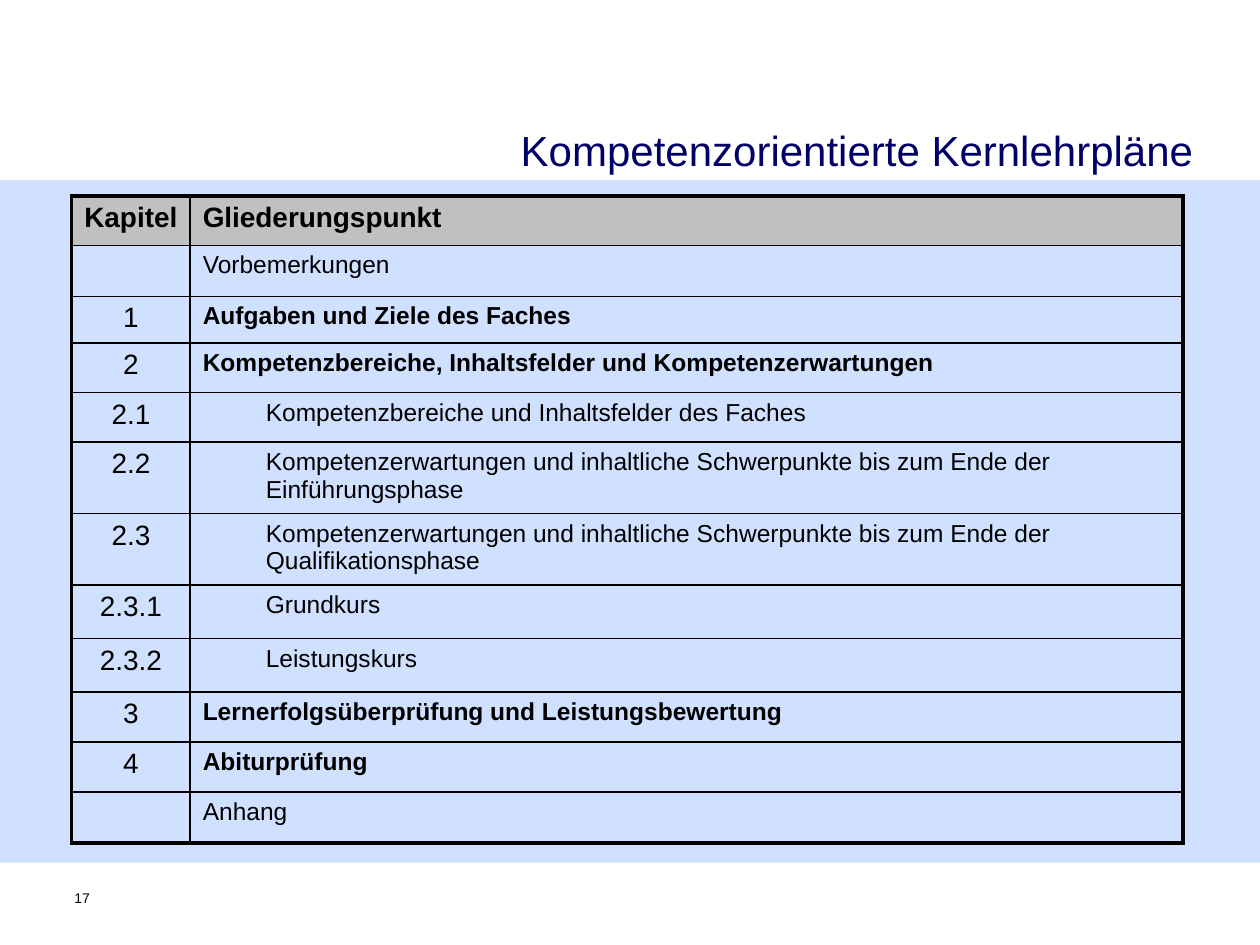
"""Builds the slide on the chapter structure of competence-oriented curricula."""
from lxml import etree
from pptx import Presentation
from pptx import util as u
from pptx.dml import color
from pptx.enum import shapes, text
from pptx.oxml import ns

COLORS = {"text": "000000", "title": "000066", "band": "6699FF", "header": "C0C0C0"}

CHAPTERS = [
    ("Kapitel", "Gliederungspunkt", "header", 28.2),
    ("", "Vorbemerkungen", "plain", 28.2),
    ("1", "Aufgaben und Ziele des Faches", "main", 26.6),
    ("2", "Kompetenzbereiche, Inhaltsfelder und Kompetenzerwartungen", "main", 28.4),
    ("2.1", "Kompetenzbereiche und Inhaltsfelder des Faches", "sub", 28.4),
    ("2.2", "Kompetenzerwartungen und inhaltliche Schwerpunkte bis zum Ende der "
            "Einführungsphase", "sub", 40.8),
    ("2.3", "Kompetenzerwartungen und inhaltliche Schwerpunkte bis zum Ende der "
            "Qualifikationsphase", "sub", 40.8),
    ("2.3.1", "Grundkurs", "sub", 30.6),
    ("2.3.2", "Leistungskurs", "sub", 30.6),
    ("3", "Lernerfolgsüberprüfung und Leistungsbewertung", "main", 28.5),
    ("4", "Abiturprüfung", "main", 28.5),
    ("", "Anhang", "plain", 28.2),
]


def write(frame, content, size=14, bold=False, fill="text", align="LEFT", indent=0):
    """Write one formatted paragraph into a text frame."""
    paragraph = frame.paragraphs[0]
    paragraph.alignment = getattr(text.PP_ALIGN, align)
    if indent:
        paragraph.level = 1
        properties = paragraph._p.get_or_add_pPr()
        properties.set("marL", str(u.Pt(indent)))
        properties.set("indent", "0")
    run = paragraph.add_run()
    run.text = content
    run.font.name = "Arial"
    run.font.size = u.Pt(size)
    run.font.bold = bold
    run.font.color.rgb = color.RGBColor.from_string(COLORS[fill])


class SlideBuilder:
    """Holds the colours and the current slide."""

    def __init__(self, presentation, colors):
        """Add a title-only slide."""
        self.colors = colors
        self.slide = presentation.slides.add_slide(presentation.slide_layouts[5])

    def paint(self, fill, name):
        """Apply a solid colour to a fill."""
        fill.solid()
        fill.fore_color.rgb = color.RGBColor.from_string(self.colors[name])

    def band(self, left, top, width, height, opacity):
        """Add a translucent background band."""
        shape = self.slide.shapes.add_shape(
            shapes.MSO_SHAPE.RECTANGLE, *map(u.Pt, (left, top, width, height)))
        shape.shadow.inherit = False
        self.paint(shape.fill, "band")
        shape.line.fill.background()
        rgb = shape._element.spPr.find(".//" + ns.qn("a:srgbClr"))
        etree.SubElement(rgb, ns.qn("a:alpha"), val=str(opacity * 1000))

    def title(self, content, left, top, width, height):
        """Place and fill the title placeholder."""
        shape = self.slide.shapes.title
        shape.left, shape.top, shape.width, shape.height = map(
            u.Pt, (left, top, width, height))
        shape.text_frame.vertical_anchor = text.MSO_ANCHOR.MIDDLE
        write(shape.text_frame, content, size=24, fill="title", align="RIGHT")

    def label(self, content, left, top, width, height):
        """Add a small text box without insets."""
        shape = self.slide.shapes.add_textbox(*map(u.Pt, (left, top, width, height)))
        frame = shape.text_frame
        frame.word_wrap = True
        frame.margin_left = frame.margin_right = frame.margin_top = frame.margin_bottom = 0
        write(frame, content, size=8)

    def borders(self, cell, outer):
        """Draw the cell borders, thicker on the outer sides."""
        properties = cell._tc.get_or_add_tcPr()
        for position, side in enumerate("LRTB"):
            width = 2.25 if side in outer else 1
            line = etree.Element(ns.qn(f"a:ln{side}"), w=str(u.Pt(width)))
            fill = etree.SubElement(line, ns.qn("a:solidFill"))
            etree.SubElement(fill, ns.qn("a:srgbClr"), val=self.colors["text"])
            properties.insert(position, line)

    def table(self, chapters, left, top, widths):
        """Add the table of chapters."""
        heights = [chapter[3] for chapter in chapters]
        table = self.slide.shapes.add_table(
            len(chapters), len(widths),
            *map(u.Pt, (left, top, sum(widths), sum(heights)))).table
        table.first_row = table.horz_banding = False
        for column, width in zip(table.columns, widths):
            column.width = u.Pt(width)
        last = len(chapters) - 1
        for index, (number, topic, kind, height) in enumerate(chapters):
            table.rows[index].height = u.Pt(height)
            header = kind == "header"
            vertical = {0: "T", last: "B"}.get(index, "")
            for position, content in enumerate((number, topic)):
                cell = table.cell(index, position)
                if header:
                    self.paint(cell.fill, "header")
                    cell.margin_right = u.Pt(5)
                else:
                    cell.fill.background()
                self.borders(cell, "LR"[position] + vertical)
                if not content:
                    continue
                first = position == 0
                write(cell.text_frame, content,
                      size=16 if header or first else 14,
                      bold=header or (kind == "main" and not first),
                      align="CENTER" if first and not header else "LEFT",
                      indent=36 if kind == "sub" and not first else 0)


def main():
    """Build and save the presentation."""
    presentation = Presentation()
    presentation.slide_width, presentation.slide_height = u.Pt(720), u.Pt(540)
    builder = SlideBuilder(presentation, COLORS)
    builder.band(0, 103, 720, 390, opacity=30)
    builder.table(CHAPTERS, 41, 112, [67.7, 567.3])
    builder.title("Kompetenzorientierte Kernlehrpläne", 224.6, 67, 464.4, 36.7)
    builder.label("17", 42.5, 508.3, 23, 26.6)
    presentation.save("out.pptx")


if __name__ == "__main__":
    main()
